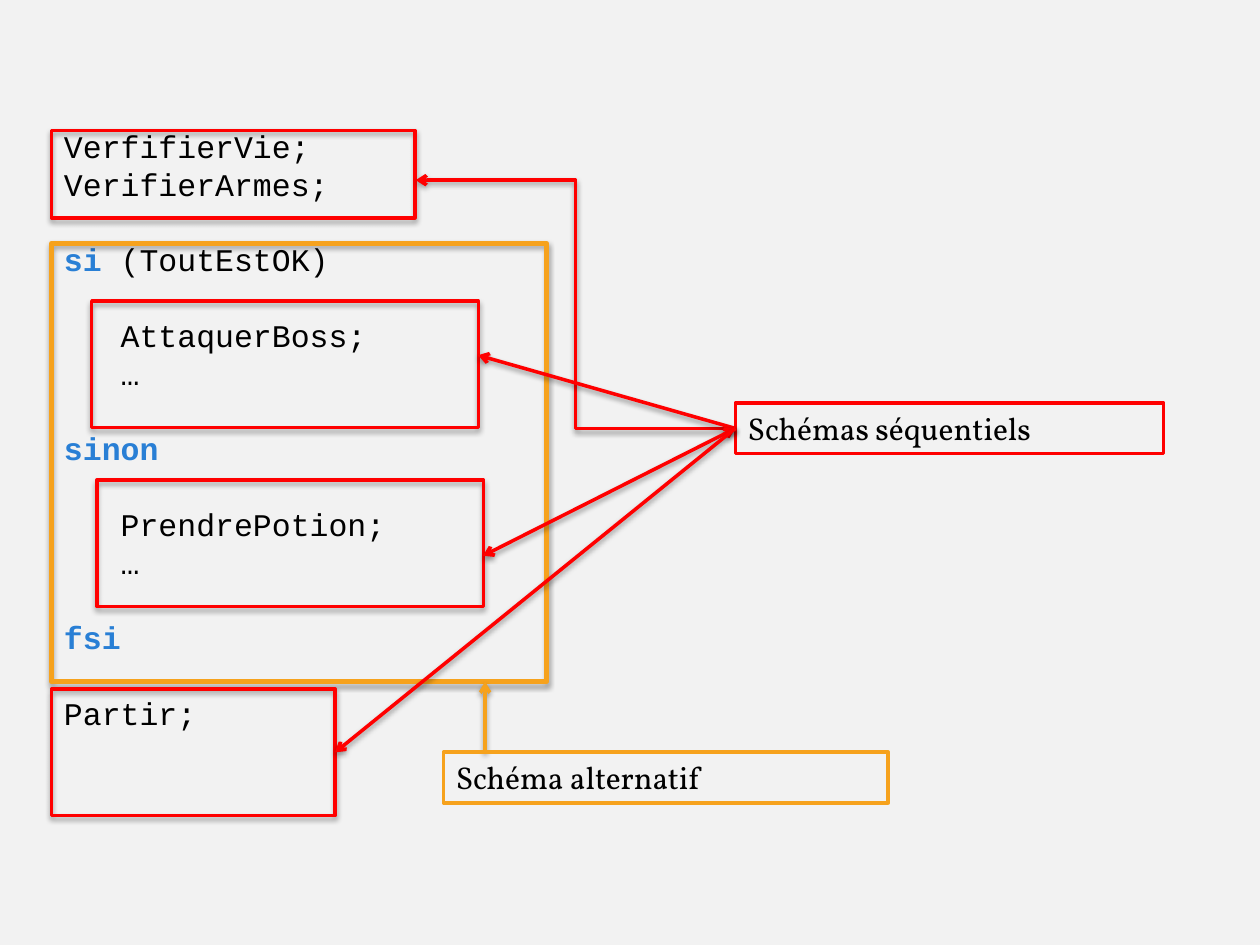
"""Build a slide that marks sequential and alternative schemes in pseudocode."""
from lxml.etree import SubElement
from pptx import Presentation
from pptx.dml.color import RGBColor
from pptx.enum.shapes import MSO_CONNECTOR, MSO_SHAPE
from pptx.enum.text import MSO_ANCHOR, PP_ALIGN
from pptx.oxml.ns import qn
from pptx.util import Pt

BACKGROUND = RGBColor(0xF2, 0xF2, 0xF2)
BLACK = RGBColor(0, 0, 0)
BLUE = RGBColor(0x29, 0x7F, 0xD5)
ORANGE = RGBColor(0xF6, 0xA2, 0x1D)
RED = RGBColor(0xFF, 0, 0)

CODE_FONT, LABEL_FONT = "Courier New", "Vollkorn"
FONT_SIZE, LINE_HEIGHT, CODE_INDENT = 18, 21.6, 32.4

# keyword, rest of line, indent level, empty lines above
CODE_LINES = [
    ("", "VerfifierVie;", 0, 0),
    ("", "VerifierArmes;", 0, 0),
    ("si", " (ToutEstOK)", 0, 1),
    ("", "AttaquerBoss;", 1, 1),
    ("", "…", 1, 0),
    ("sinon", "", 0, 1),
    ("", "PrendrePotion;", 1, 1),
    ("", "…", 1, 0),
    ("fsi", "", 0, 1),
    ("", "Partir;", 0, 1),
]
CODE_AREA = (29.5, 69.1, 283, 352.8)
ALTERNATIVE_FRAME = (29.5, 139, 283, 250.6)
SEQUENCE_FRAMES = [
    (29.5, 74.6, 207.6, 50),
    (52.4, 172.1, 221, 72.3),
    (55.4, 274.3, 221, 72.3),
    (29.5, 393.8, 162, 72.3),
]
ALTERNATIVE_LABEL = ("Schéma alternatif", ORANGE, (253.4, 429.8, 254.2, 29))
SEQUENCE_LABEL = ("Schémas séquentiels", RED, (420.2, 230.3, 244.8, 29))
LABEL_ANCHOR = (420.2, 244.8)
ALTERNATIVE_ARROW = ((277.2, 429.8), (277.2, 389.6))
SEQUENCE_ARROWS = [
    (MSO_CONNECTOR.ELBOW, (237.6, 103), ("tailEnd",)),
    (MSO_CONNECTOR.STRAIGHT, (273.2, 203), ("tailEnd",)),
    (MSO_CONNECTOR.STRAIGHT, (276, 317.6), ("headEnd", "tailEnd")),
    (MSO_CONNECTOR.STRAIGHT, (191.5, 430), ("tailEnd",)),
]


def points(values):
    return [Pt(value) for value in values]


def add_shadow(effects, opacity, distance):
    shadow = SubElement(effects, qn("a:outerShdw"), blurRad=str(Pt(3.1)),
                        dist=str(Pt(distance)), dir="5400000", rotWithShape="0")
    color = SubElement(shadow, qn("a:srgbClr"), val="000000")
    SubElement(color, qn("a:alpha"), val=str(opacity * 1000))


def style_run(run, font_name, color=BLACK, bold=False):
    run.font.name = font_name
    run.font.size = Pt(FONT_SIZE)
    run.font.color.rgb = color
    run.font.bold = bold


def add_frame(slide, area, color, width=2, shadowed=True):
    shape = slide.shapes.add_shape(MSO_SHAPE.RECTANGLE, *points(area))
    shape.fill.background()
    shape.line.color.rgb = color
    shape.line.width = Pt(width)
    shape.shadow.inherit = False
    if shadowed:
        add_shadow(shape._element.spPr.find(qn("a:effectLst")), 35, 1.8)
    return shape


def add_label(slide, text, color, area):
    shape = add_frame(slide, area, color, shadowed=False)
    frame = shape.text_frame
    frame.word_wrap = True
    frame.vertical_anchor = MSO_ANCHOR.TOP
    frame.text = text
    frame.paragraphs[0].alignment = PP_ALIGN.LEFT
    style_run(frame.paragraphs[0].runs[0], LABEL_FONT)
    return shape


def add_arrow(slide, kind, start, end, color, arrowheads=("tailEnd",)):
    connector = slide.shapes.add_connector(kind, *points(start + end))
    connector.line.color.rgb = color
    connector.line.width = Pt(2)
    line = connector.line._get_or_add_ln()
    for arrowhead in arrowheads:
        SubElement(line, qn(f"a:{arrowhead}"), type="arrow")
    effects = SubElement(connector._element.spPr, qn("a:effectLst"))
    add_shadow(effects, 38, 1.6)
    return connector


def add_code(slide):
    frame = slide.shapes.add_textbox(*points(CODE_AREA)).text_frame
    frame.word_wrap = True
    for index, (keyword, rest, level, gap) in enumerate(CODE_LINES):
        paragraph = frame.add_paragraph() if index else frame.paragraphs[0]
        paragraph.line_spacing = Pt(LINE_HEIGHT)
        paragraph.space_before = Pt(gap * LINE_HEIGHT)
        paragraph._p.get_or_add_pPr().set("marL", str(Pt(level * CODE_INDENT)))
        for text, color, bold in ((keyword, BLUE, True), (rest, BLACK, False)):
            if text:
                run = paragraph.add_run()
                run.text = text
                style_run(run, CODE_FONT, color, bold)


def main():
    presentation = Presentation()
    presentation.slide_width, presentation.slide_height = Pt(720), Pt(540)
    slide = presentation.slides.add_slide(presentation.slide_layouts[6])
    slide.background.fill.solid()
    slide.background.fill.fore_color.rgb = BACKGROUND

    add_code(slide)
    add_frame(slide, ALTERNATIVE_FRAME, ORANGE, 2.75)
    add_arrow(slide, MSO_CONNECTOR.STRAIGHT, *ALTERNATIVE_ARROW, ORANGE)
    add_label(slide, *ALTERNATIVE_LABEL)

    frames = [add_frame(slide, area, RED) for area in SEQUENCE_FRAMES]
    label = add_label(slide, *SEQUENCE_LABEL)
    for kind, end, arrowheads in SEQUENCE_ARROWS:
        arrow = add_arrow(slide, kind, LABEL_ANCHOR, end, RED, arrowheads)
        if kind == MSO_CONNECTOR.STRAIGHT:
            arrow.begin_connect(label, 1)
    arrow.end_connect(frames[-1], 3)

    presentation.save("out.pptx")


if __name__ == "__main__":
    main()
